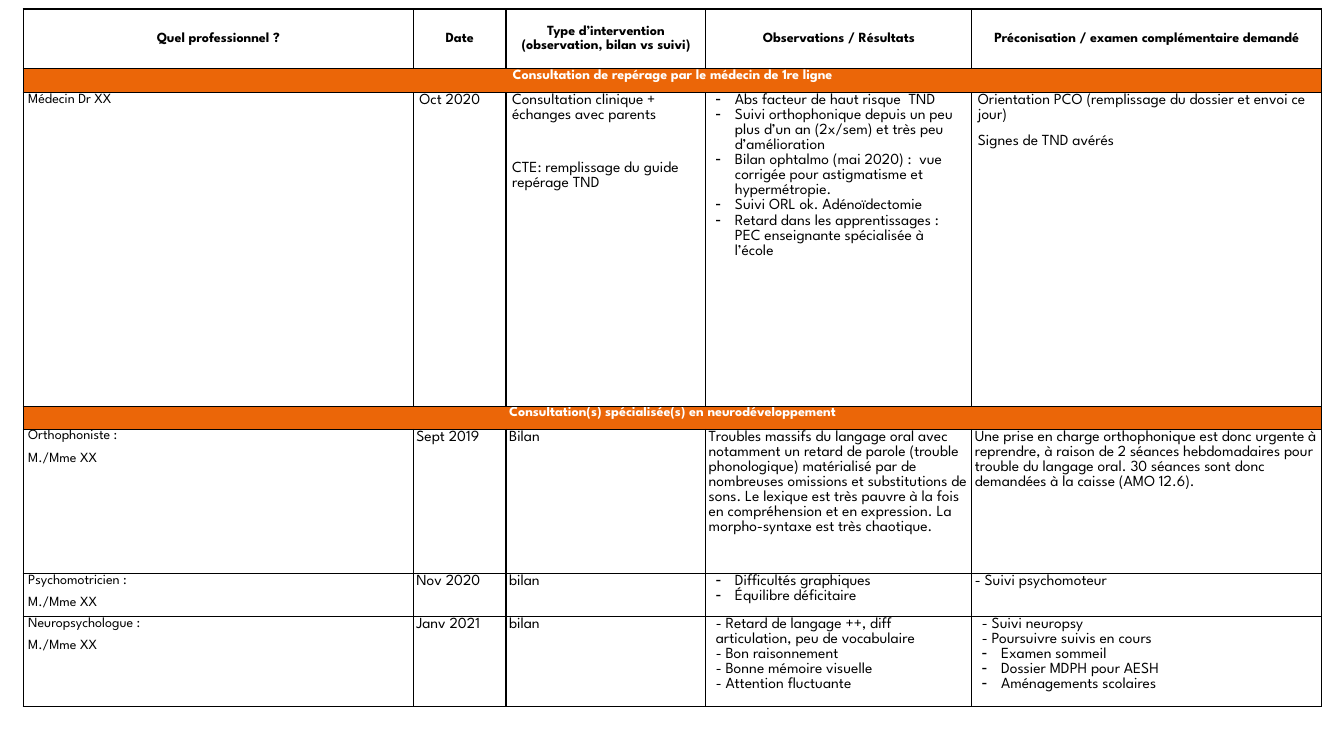
from dataclasses import dataclass

from lxml import etree
from pptx import Presentation
from pptx.dml import color
from pptx.enum import text
from pptx.oxml import ns
from pptx.util import Inches, Pt

FONT = "League Spartan"
BLACK, WHITE, ORANGE = "000000", "FFFFFF", "EB6608"
COLUMN_WIDTHS = [3.87, 0.92, 1.98, 2.64, 3.47]
ROW_HEIGHTS = [0.59, 0.24, 3.11, 0.23, 1.43, 0.43, 0.89]


@dataclass
class Line:
    """One paragraph of a cell; spacing in points, indents in inches."""
    wording: str
    after: float = 8
    before: float = 0
    bullet_indent: float = 0


@dataclass
class Entry:
    """The content and look of one table cell."""
    lines: list[Line]
    inset: float = 0.05
    size: float = 11
    bold: bool = False
    centred: bool = False
    ink: str = BLACK
    fill: str | None = None
    middle: bool = False


def rgb(value: str) -> color.RGBColor:
    return color.RGBColor.from_string(value)


# Kinds of cells
def heading(wording: str) -> Entry:
    return Entry([Line(wording)], size=10, bold=True, centred=True, middle=True)


def band(wording: str) -> list[Entry]:
    title = Entry([Line(wording)], size=10, bold=True, centred=True, ink=WHITE, fill=ORANGE)
    return [title] + [Entry([], fill=ORANGE) for _ in COLUMN_WIDTHS[1:]]


def professional(role: str) -> Entry:
    return Entry([Line(role, after=6), Line("M./Mme XX", after=6)], size=10)


def note(wording: str, inset: float = 0.03) -> Entry:
    return Entry([Line(wording)], inset)


def bullets(*wordings: str, indent: float = 0.19) -> list[Line]:
    return [Line(wording, after=0, bullet_indent=indent) for wording in wordings]


def tight(*wordings: str) -> list[Line]:
    return [Line(wording, after=0) for wording in wordings]


ROWS = [
    [heading(wording) for wording in (
        "Quel professionnel ?",
        "Date",
        "Type d’intervention (observation, bilan vs suivi)",
        "Observations / Résultats",
        "Préconisation / examen complémentaire demandé",
    )],
    band("Consultation de repérage par le médecin de 1re ligne"),
    [
        Entry([Line("Médecin Dr XX")], size=10),
        note("Oct 2020", 0.06),
        Entry([
            Line("Consultation clinique + échanges avec parents"),
            Line("CTE: remplissage du guide repérage TND", before=19),
        ], 0.06),
        Entry(bullets(
            "Abs facteur de haut risque  TND",
            "Suivi orthophonique depuis un peu plus d’un an (2x/sem) et très peu d’amélioration",
            "Bilan ophtalmo (mai 2020) :  vue corrigée pour astigmatisme et hypermétropie.",
            "Suivi ORL ok. Adénoïdectomie",
            "Retard dans les apprentissages : PEC enseignante spécialisée à l’école",
            indent=0.23,
        ), 0.06),
        Entry([
            Line("Orientation PCO (remplissage du dossier et envoi ce jour)"),
            Line("Signes de TND avérés"),
        ], 0.06),
    ],
    band("Consultation(s) spécialisée(s) en neurodéveloppement"),
    [
        professional("Orthophoniste :"),
        note("Sept 2019"),
        note("Bilan"),
        note("Troubles massifs du langage oral avec notamment un retard de parole (trouble "
             "phonologique) matérialisé par de nombreuses omissions et substitutions de sons. "
             "Le lexique est très pauvre à la fois en compréhension et en expression. "
             "La morpho-syntaxe est très chaotique."),
        note("Une prise en charge orthophonique est donc urgente à reprendre, à raison de "
             "2 séances hebdomadaires pour trouble du langage oral. 30 séances sont donc "
             "demandées à la caisse (AMO 12.6)."),
    ],
    [
        professional("Psychomotricien :"),
        note("Nov 2020"),
        note("bilan"),
        Entry(bullets("Difficultés graphiques", "Équilibre déficitaire"), 0.1),
        note("- Suivi psychomoteur"),
    ],
    [
        professional("Neuropsychologue :"),
        note("Janv 2021"),
        note("bilan"),
        Entry(tight(
            "- Retard de langage ++, diff articulation, peu de vocabulaire",
            "- Bon raisonnement",
            "- Bonne mémoire visuelle",
            "- Attention fluctuante",
        ), 0.1),
        Entry(tight("- Suivi neuropsy", "- Poursuivre suivis en cours")
              + bullets("Examen sommeil", "Dossier MDPH pour AESH", "Aménagements scolaires"), 0.1),
    ],
]


def add_borders(cell) -> None:
    properties = cell._tc.get_or_add_tcPr()
    for side in ("lnL", "lnR", "lnT", "lnB"):
        border = etree.SubElement(properties, ns.qn(f"a:{side}"), w=str(Pt(1)))
        solid = etree.SubElement(border, ns.qn("a:solidFill"))
        etree.SubElement(solid, ns.qn("a:srgbClr"), val=BLACK)


def add_bullet(paragraph, indent: float) -> None:
    properties = paragraph._p.get_or_add_pPr()
    properties.set("marL", str(Inches(indent)))
    properties.set("indent", str(-Inches(0.19)))
    etree.SubElement(properties, ns.qn("a:buChar"), char="-")


def write_line(paragraph, line: Line, entry: Entry) -> None:
    paragraph.text = line.wording
    paragraph.alignment = text.PP_ALIGN.CENTER if entry.centred else text.PP_ALIGN.LEFT
    paragraph.line_spacing = 1.07
    paragraph.space_before = Pt(line.before)
    paragraph.space_after = Pt(line.after)
    if line.bullet_indent:
        add_bullet(paragraph, line.bullet_indent)
    font = paragraph.font
    font.name, font.size, font.bold = FONT, Pt(entry.size), entry.bold
    font.color.rgb = rgb(entry.ink)


def fill_cell(cell, entry: Entry) -> None:
    cell.margin_left = cell.margin_right = Inches(entry.inset)
    cell.margin_top = cell.margin_bottom = 0
    cell.vertical_anchor = text.MSO_ANCHOR.MIDDLE if entry.middle else text.MSO_ANCHOR.TOP
    add_borders(cell)
    if entry.fill:
        cell.fill.solid()
        cell.fill.fore_color.rgb = rgb(entry.fill)
    else:
        cell.fill.background()
    frame = cell.text_frame
    for index, line in enumerate(entry.lines):
        write_line(frame.add_paragraph() if index else frame.paragraphs[0], line, entry)


def main() -> None:
    presentation = Presentation()
    presentation.slide_width, presentation.slide_height = Inches(13.33), Inches(7.5)
    slide = presentation.slides.add_slide(presentation.slide_layouts[6])

    # Follow-up table
    table = slide.shapes.add_table(
        len(ROW_HEIGHTS), len(COLUMN_WIDTHS), Inches(0.23), Inches(0.09),
        Inches(sum(COLUMN_WIDTHS)), Inches(sum(ROW_HEIGHTS))).table
    table.first_row = table.horz_banding = False
    for column, width in zip(table.columns, COLUMN_WIDTHS):
        column.width = Inches(width)
    for row, height, entries in zip(table.rows, ROW_HEIGHTS, ROWS):
        row.height = Inches(height)
        for cell, entry in zip(row.cells, entries):
            fill_cell(cell, entry)

    # Section bands span the whole width
    for index, entries in enumerate(ROWS):
        if entries[0].fill:
            table.cell(index, 0).merge(table.cell(index, len(COLUMN_WIDTHS) - 1))

    presentation.save("out.pptx")


if __name__ == "__main__":
    main()
